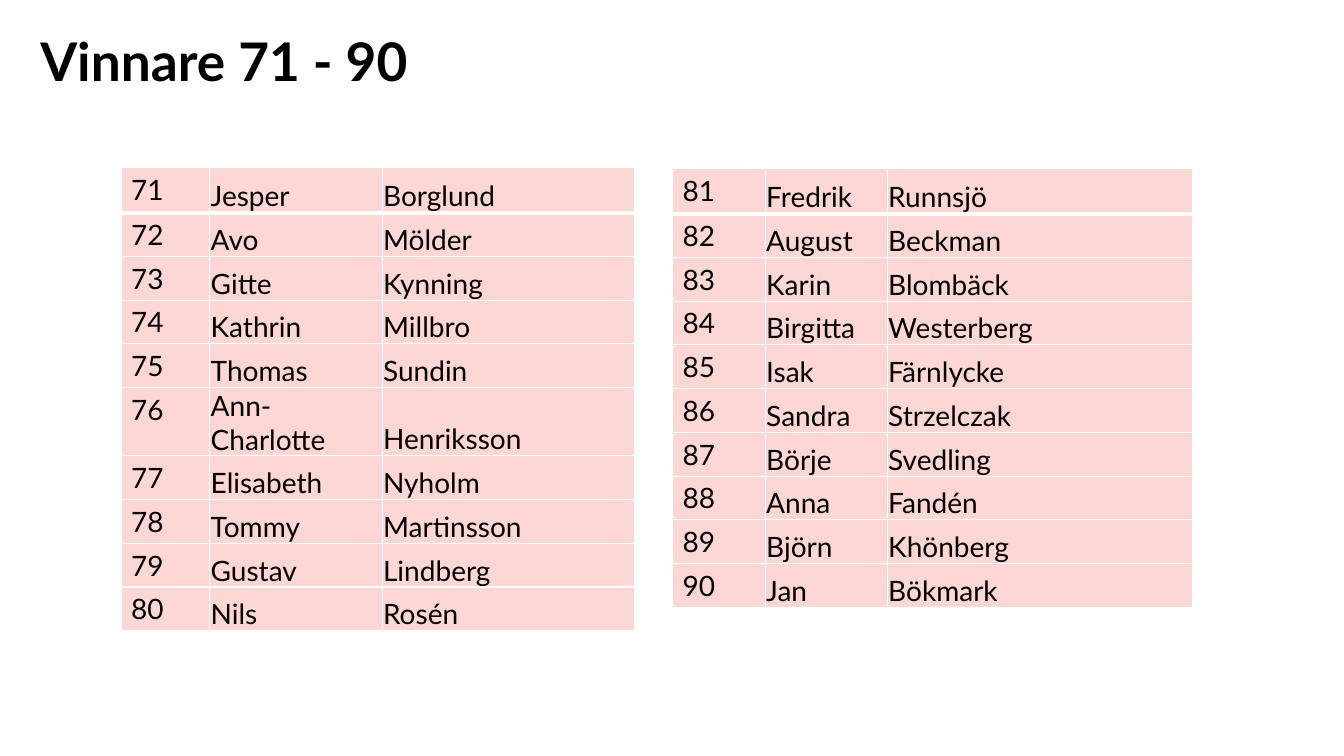
from lxml.etree import SubElement
from pptx import Presentation
from pptx.dml.color import RGBColor
from pptx.enum.text import MSO_ANCHOR
from pptx.oxml.ns import qn
from pptx.util import Inches, Pt

TITLE = "Vinnare 71 - 90"
FONT, INK, PINK, WHITE = "Lato", "000000", "FCD7D4", "FFFFFF"
FIRST_ROW, OTHER_ROW = 0.45, 0.41
THIN, THICK = 1, 3

WINNER_LISTS = [
    {
        "start": 71, "left": 1.2, "top": 1.66, "columns": (0.88, 1.71, 2.5),
        "names": [
            ("Jesper", "Borglund"), ("Avo", "Mölder"), ("Gitte", "Kynning"),
            ("Kathrin", "Millbro"), ("Thomas", "Sundin"),
            ("Ann-Charlotte", "Henriksson"), ("Elisabeth", "Nyholm"),
            ("Tommy", "Martinsson"), ("Gustav", "Lindberg"), ("Nils", "Rosén"),
        ],
    },
    {
        "start": 81, "left": 6.67, "top": 1.67, "columns": (0.92, 1.21, 3.03),
        "names": [
            ("Fredrik", "Runnsjö"), ("August", "Beckman"), ("Karin", "Blombäck"),
            ("Birgitta", "Westerberg"), ("Isak", "Färnlycke"),
            ("Sandra", "Strzelczak"), ("Börje", "Svedling"),
            ("Anna", "Fandén"), ("Björn", "Khönberg"), ("Jan", "Bökmark"),
        ],
    },
]


def color(value):
    return RGBColor.from_string(value)


def set_font(para, size, bold=False):
    para.font.name = FONT
    para.font.size = Pt(size)
    para.font.bold = bold
    para.font.color.rgb = color(INK)


def set_margins(holder, left, top, right, bottom):
    holder.margin_left, holder.margin_top = Inches(left), Inches(top)
    holder.margin_right, holder.margin_bottom = Inches(right), Inches(bottom)


def add_borders(cell, row):
    properties = cell._tc.get_or_add_tcPr()
    widths = {
        "a:lnL": THIN,
        "a:lnR": THIN,
        "a:lnT": THICK if row == 1 else THIN,
        "a:lnB": THICK if row == 0 else THIN,
    }
    for side, width in widths.items():
        line = SubElement(properties, qn(side), w=str(Pt(width)))
        fill = SubElement(line, qn("a:solidFill"))
        SubElement(fill, qn("a:srgbClr"), val=WHITE)


def add_title(page):
    box = page.shapes.add_textbox(Inches(0.4), 0, Inches(11.27), Inches(1.66))
    frame = box.text_frame
    frame.word_wrap = True
    set_margins(frame, 0, 0.28, 0, 0)
    frame.text = TITLE
    set_font(frame.paragraphs[0], 38, bold=True)


def add_winners(page, winners):
    names, columns = winners["names"], winners["columns"]
    heights = [FIRST_ROW] + [OTHER_ROW] * (len(names) - 1)
    table = page.shapes.add_table(
        len(names), len(columns), Inches(winners["left"]), Inches(winners["top"]),
        Inches(sum(columns)), Inches(sum(heights))).table
    table.first_row = table.horz_banding = False
    for column, width in zip(table.columns, columns):
        column.width = Inches(width)
    for row, (name, height) in enumerate(zip(names, heights)):
        table.rows[row].height = Inches(height)
        for column, text in enumerate((str(winners["start"] + row), *name)):
            cell = table.cell(row, column)
            cell.text = text
            set_font(cell.text_frame.paragraphs[0], 20)
            if column > 0:
                cell.vertical_anchor = MSO_ANCHOR.BOTTOM
                set_margins(cell, 0.01, 0.01, 0.01, 0)
            add_borders(cell, row)
            cell.fill.solid()
            cell.fill.fore_color.rgb = color(PINK)


def main():
    deck = Presentation()
    deck.slide_width, deck.slide_height = Inches(13.33), Inches(7.5)
    page = deck.slides.add_slide(deck.slide_layouts[6])
    add_title(page)
    for winners in WINNER_LISTS:
        add_winners(page, winners)
    deck.save("out.pptx")


if __name__ == "__main__":
    main()
